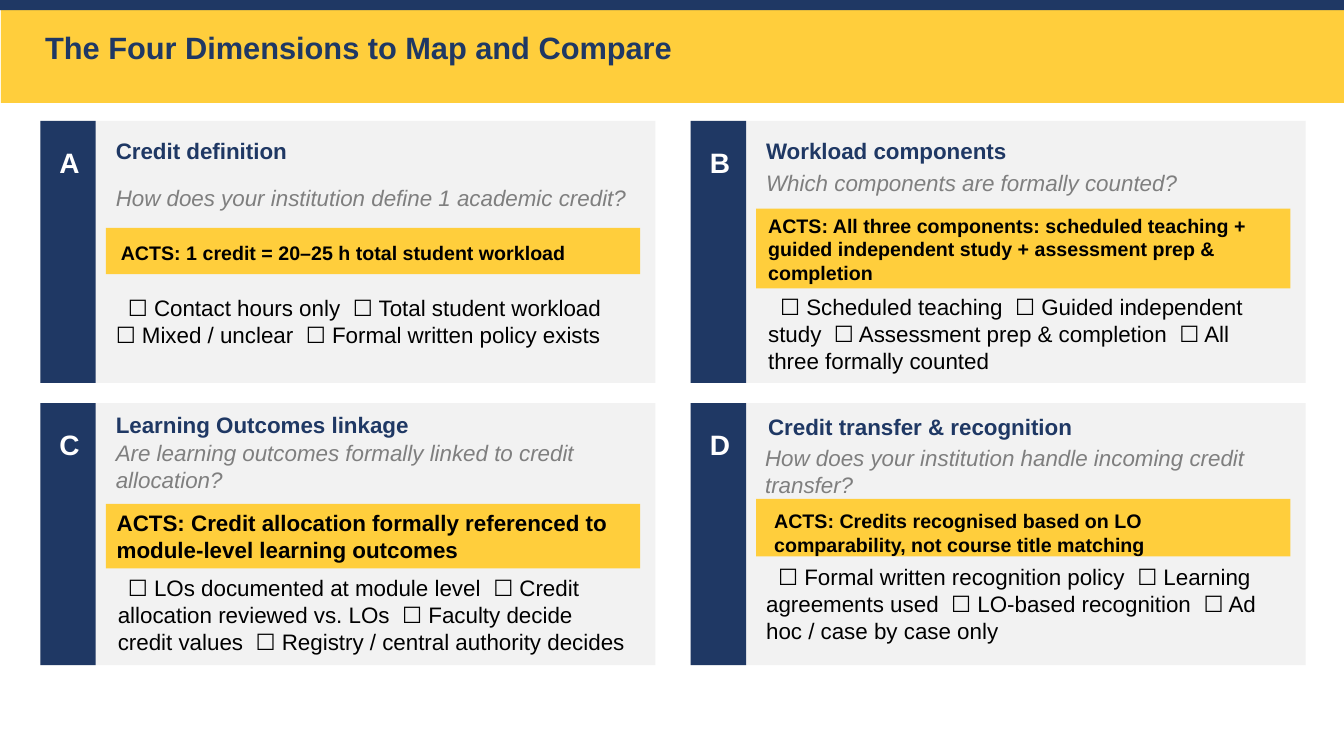
from dataclasses import dataclass

from pptx import Presentation
from pptx.dml.color import RGBColor
from pptx.enum.shapes import MSO_SHAPE
from pptx.enum.text import MSO_AUTO_SIZE, PP_ALIGN
from pptx.util import Inches, Pt

RECTANGLE = MSO_SHAPE.RECTANGLE
FIT_SHAPE = MSO_AUTO_SIZE.SHAPE_TO_FIT_TEXT
LEFT, CENTER = PP_ALIGN.LEFT, PP_ALIGN.CENTER


@dataclass(frozen=True)
class Theme:
    """Colours and type sizes of the slide."""
    font: str = "Arial"
    navy: str = "1F3864"
    yellow: str = "FFCE3C"
    panel: str = "F2F2F2"
    muted: str = "7F7F7F"
    ink: str = "000000"
    white: str = "FFFFFF"
    title: int = 22
    letter: int = 20
    body: int = 16
    compact: int = 14
    option_gap: str = "445"


@dataclass(frozen=True)
class Dimension:
    """Wording of one card, with each part's box measured from the card's corner."""
    letter: str
    heading: str
    heading_box: tuple
    question: str
    question_box: tuple
    band_box: tuple
    benchmark: str
    benchmark_box: tuple
    benchmark_size: int
    options: tuple
    options_box: tuple
    options_indent: float = 0.12


THEME = Theme()
SLIDE_WIDTH, SLIDE_HEIGHT = 13.33, 7.5
CARD_LEFT, CARD_TOP = 0.4, 1.2
CARD_WIDTH, CARD_HEIGHT = 6.1, 2.6
COLUMN_STEP, ROW_STEP = 6.45, 2.8
TAB_WIDTH = 0.55

DIMENSIONS = (
    Dimension(
        "A", "Credit definition", (0.65, 0.11, 5.3, 0.38),
        "How does your institution define 1 academic credit?", (0.65, 0.58, 5.3, 0.37),
        (0.65, 1.06, 5.3, 0.46),
        "ACTS: 1 credit = 20–25 h total student workload",
        (0.7, 1.14, 5.2, 0.34), THEME.compact,
        ("Contact hours only", "Total student workload", "Mixed / unclear",
         "Formal written policy exists"),
        (0.65, 1.67, 5.3, 0.64)),
    Dimension(
        "B", "Workload components", (0.65, 0.11, 5.3, 0.38),
        "Which components are formally counted?", (0.65, 0.43, 5.3, 0.37),
        (0.65, 0.87, 5.3, 0.79),
        "ACTS: All three components: scheduled teaching + guided independent study"
        " + assessment prep & completion",
        (0.67, 0.87, 5.35, 0.81), THEME.compact,
        ("Scheduled teaching", "Guided independent study",
         "Assessment prep & completion", "All three formally counted"),
        (0.67, 1.66, 5.3, 0.91)),
    Dimension(
        "C", "Learning Outcomes linkage", (0.65, 0.03, 5.3, 0.38),
        "Are learning outcomes formally linked to credit allocation?",
        (0.65, 0.31, 5.62, 0.64),
        (0.65, 1, 5.3, 0.64),
        "ACTS: Credit allocation formally referenced to module-level learning outcomes",
        (0.66, 1, 5.33, 0.64), THEME.body,
        ("LOs documented at module level", "Credit allocation reviewed vs. LOs",
         "Faculty decide credit values", "Registry / central authority decides"),
        (0.67, 1.65, 5.3, 0.91), 0.1),
    Dimension(
        "D", "Credit transfer & recognition", (0.67, 0.05, 5.3, 0.38),
        "How does your institution handle incoming credit transfer?",
        (0.64, 0.36, 5.3, 0.64),
        (0.65, 0.95, 5.3, 0.57),
        "ACTS: Credits recognised based on LO comparability, not course title matching",
        (0.73, 1, 5.2, 0.57), THEME.compact,
        ("Formal written recognition policy", "Learning agreements used",
         "LO-based recognition", "Ad hoc / case by case only"),
        (0.65, 1.54, 5.3, 0.91)),
)


def add_block(slide, box, color):
    """Add a plain filled rectangle."""
    block = slide.shapes.add_shape(RECTANGLE, *map(Inches, box))
    block.shadow.inherit = False
    block.fill.solid()
    block.fill.fore_color.rgb = RGBColor.from_string(color)
    block.line.fill.background()


def add_paragraph_box(slide, box, align=LEFT):
    """Add a wrapping text box and return its paragraph."""
    frame = slide.shapes.add_textbox(*map(Inches, box)).text_frame
    frame.word_wrap = True
    frame.auto_size = FIT_SHAPE
    paragraph = frame.paragraphs[0]
    paragraph.alignment = align
    return paragraph


def add_run(paragraph, text, size, color, bold=False, italic=False):
    """Append one styled run and return it."""
    run = paragraph.add_run()
    run.text = text
    run.font.name = THEME.font
    run.font.size = Pt(size)
    run.font.bold = bold
    run.font.italic = italic
    run.font.color.rgb = RGBColor.from_string(color)
    return run


def add_options(slide, box, options, indent):
    """Add the running checklist with a first-line indent and widened gaps."""
    checklist = add_paragraph_box(slide, box)
    properties = checklist._p.get_or_add_pPr()
    properties.set("marL", "0")
    properties.set("indent", str(Inches(indent)))
    for index, option in enumerate(options):
        if index:
            gap = add_run(checklist, " ", THEME.body, THEME.ink)
            gap._r.get_or_add_rPr().set("spc", THEME.option_gap)
        add_run(checklist, f"☐ {option}", THEME.body, THEME.ink)


def add_header(slide, left, top, width):
    """Add the title band with its dark top edge."""
    add_block(slide, (left + 0.01, top, width, 1.02), THEME.yellow)
    add_block(slide, (left, top, width, 0.1), THEME.navy)
    title = add_paragraph_box(slide, (left + 0.35, top + 0.24, 12, 0.47))
    add_run(title, "The Four Dimensions to Map and Compare",
            THEME.title, THEME.navy, bold=True)


def add_card(slide, left, top, width, height, dimension):
    """Add one dimension card with its letter tab, benchmark and checklist."""
    def place(box):
        """Shift a box from card to slide coordinates."""
        return (left + box[0], top + box[1], *box[2:])

    add_block(slide, (left, top, width, height), THEME.panel)
    add_block(slide, (left, top, TAB_WIDTH, height), THEME.navy)
    letter = add_paragraph_box(slide, place((0.03, 0.19, 0.52, 0.5)), CENTER)
    add_run(letter, dimension.letter, THEME.letter, THEME.white, bold=True)
    heading = add_paragraph_box(slide, place(dimension.heading_box))
    add_run(heading, dimension.heading, THEME.body, THEME.navy, bold=True)
    question = add_paragraph_box(slide, place(dimension.question_box))
    add_run(question, dimension.question, THEME.body, THEME.muted, italic=True)
    add_block(slide, place(dimension.band_box), THEME.yellow)
    benchmark = add_paragraph_box(slide, place(dimension.benchmark_box))
    add_run(benchmark, dimension.benchmark, dimension.benchmark_size,
            THEME.ink, bold=True)
    add_options(slide, place(dimension.options_box), dimension.options,
                dimension.options_indent)


def main():
    """Build the slide and save it."""
    deck = Presentation()
    deck.slide_width, deck.slide_height = Inches(SLIDE_WIDTH), Inches(SLIDE_HEIGHT)
    slide = deck.slides.add_slide(deck.slide_layouts[6])
    add_header(slide, 0, 0, SLIDE_WIDTH)
    for index, dimension in enumerate(DIMENSIONS):
        row, column = divmod(index, 2)
        add_card(slide, CARD_LEFT + column * COLUMN_STEP, CARD_TOP + row * ROW_STEP,
                 CARD_WIDTH, CARD_HEIGHT, dimension)
    deck.save("out.pptx")


if __name__ == "__main__":
    main()
